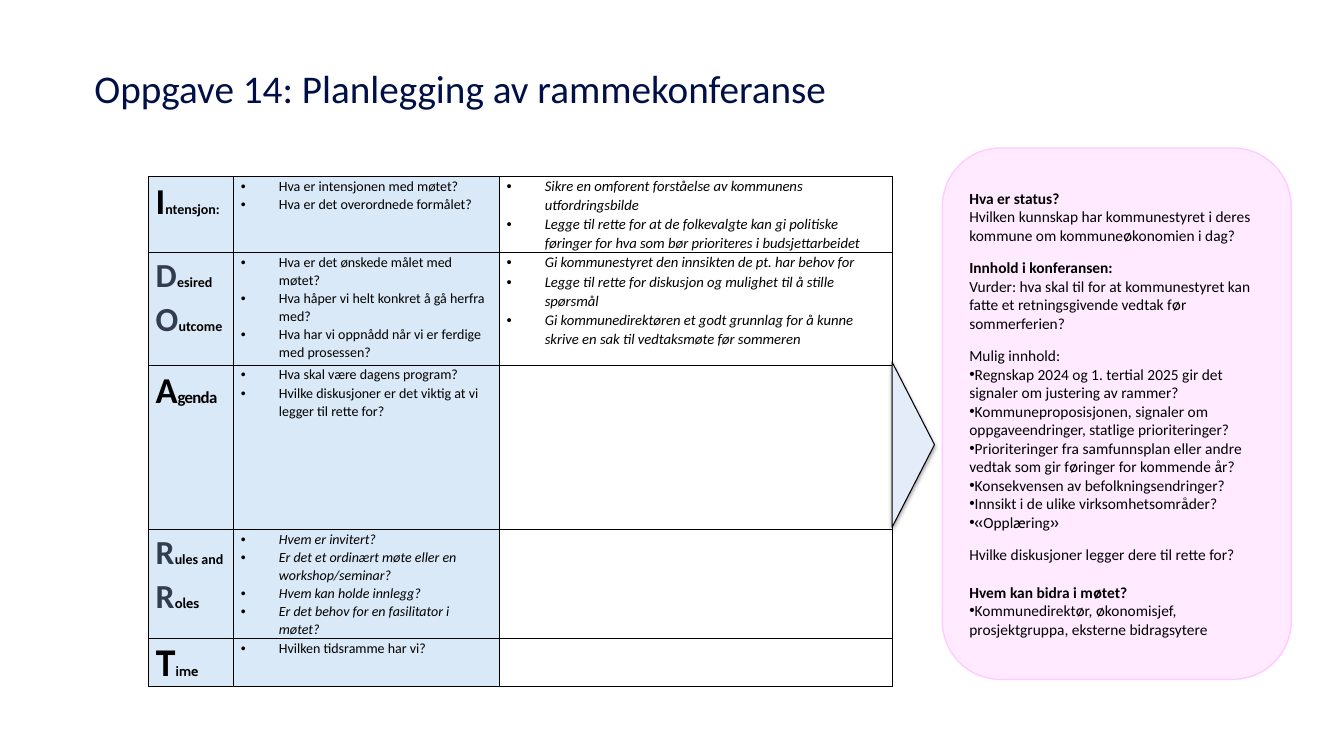
from itertools import groupby

from lxml import etree
from pptx import Presentation
from pptx.dml.color import RGBColor
from pptx.enum.shapes import MSO_SHAPE
from pptx.enum.text import MSO_ANCHOR, PP_ALIGN
from pptx.oxml.ns import qn
from pptx.util import Cm, Pt

ROUNDED = MSO_SHAPE.ROUNDED_RECTANGLE
TRIANGLE = MSO_SHAPE.ISOSCELES_TRIANGLE
TOP, MIDDLE = MSO_ANCHOR.TOP, MSO_ANCHOR.MIDDLE
LEFT = PP_ALIGN.LEFT

COLOURS = {
    "title": "001046",
    "text": "000000",
    "initial": "323E4F",
    "label": "DAE9F7",
    "arrow": "E3ECF8",
    "panel": "FFCCFF",
}
BODY_FONT, SECOND_FONT = "Calibri", "Cabin"

STRONG = (26, "text", -50, BODY_FONT)
STRONG_SECOND = (26, "text", -50, SECOND_FONT)
SOFT = (24, "initial", 20, BODY_FONT)
SMALL = (10, "text", 0, BODY_FONT)
SMALL_SECOND = (10, "text", 0, SECOND_FONT)
TIGHT = (12, "text", -50, BODY_FONT)

COLUMN_WIDTHS = (2.15, 6.7, 9.9)
PLAIN, ITALIC, ANSWER = (10, False), (10, True), (10.5, True)
ROWS = [
    (1.9, [("I", STRONG), ("ntensjon:", SMALL)], PLAIN,
     ["Hva er intensjonen med møtet?", "Hva er det overordnede formålet?"],
     ["Sikre en omforent forståelse av kommunens utfordringsbilde",
      "Legge til rette for at de folkevalgte kan gi politiske føringer for hva "
      "som bør prioriteres i budsjettarbeidet"]),
    (2.84, [("D", SOFT), ("esired ", SMALL), ("O", SOFT), ("utcome", SMALL)], PLAIN,
     ["Hva er det ønskede målet med møtet?",
      "Hva håper vi helt konkret å gå herfra med?",
      "Hva har vi oppnådd når vi er ferdige med prosessen?"],
     ["Gi kommunestyret den innsikten de pt. har behov for",
      "Legge til rette for diskusjon og mulighet til å stille spørsmål",
      "Gi kommunedirektøren et godt grunnlag for å kunne skrive en sak til "
      "vedtaksmøte før sommeren"]),
    (4.14, [("A", STRONG), ("genda", TIGHT)], PLAIN,
     ["Hva skal være dagens program?",
      "Hvilke diskusjoner er det viktig at vi legger til rette for?"], []),
    (2.27, [("R", SOFT), ("ules and ", SMALL), ("R", SOFT), ("oles", SMALL_SECOND)], ITALIC,
     ["Hvem er invitert?", "Er det et ordinært møte eller en workshop/seminar?",
      "Hvem kan holde innlegg?", "Er det behov for en fasilitator i møtet?"], []),
    (1.21, [("T", STRONG_SECOND), ("ime", SMALL_SECOND)], PLAIN,
     ["Hvilken tidsramme har vi?"], []),
]

HEADING, TEXT, BULLET = "heading", "text", "bullet"
PANEL = [
    (0, HEADING, "Hva er status?"),
    (0, TEXT, "Hvilken kunnskap har kommunestyret i deres kommune om kommuneøkonomien i dag?"),
    (10, HEADING, "Innhold i konferansen:"),
    (0, TEXT, "Vurder: hva skal til for at kommunestyret kan fatte et retningsgivende "
              "vedtak før sommerferien?"),
    (10, TEXT, "Mulig innhold:"),
    (0, BULLET, "Regnskap 2024 og 1. tertial 2025 gir det signaler om justering av rammer?"),
    (0, BULLET, "Kommuneproposisjonen, signaler om oppgaveendringer, statlige prioriteringer?"),
    (0, BULLET, "Prioriteringer fra samfunnsplan eller andre vedtak som gir føringer for "
                "kommende år?"),
    (0, BULLET, "Konsekvensen av befolkningsendringer?"),
    (0, BULLET, "Innsikt i de ulike virksomhetsområder?"),
    (0, BULLET, "«Opplæring»"),
    (10, TEXT, "Hvilke diskusjoner legger dere til rette for?"),
    (13.5, HEADING, "Hvem kan bidra i møtet?"),
    (0, BULLET, "Kommunedirektør, økonomisjef, prosjektgruppa, eksterne bidragsytere"),
]


def colour(name):
    return RGBColor.from_string(COLOURS[name])


def set_font(font, size, colour_name="text", name=BODY_FONT, bold=False, italic=False):
    font.size, font.name = Pt(size), name
    font.bold, font.italic = bold, italic
    font.color.rgb = colour(colour_name)


def add_bullet(paragraph, indent):
    properties = paragraph._p.get_or_add_pPr()
    properties.set("marL", str(indent))
    properties.set("indent", str(-indent))
    etree.SubElement(properties, qn("a:buFont"), typeface="Arial")
    etree.SubElement(properties, qn("a:buChar"), char="•")


def add_paragraph(frame, index):
    return frame.paragraphs[0] if index == 0 else frame.add_paragraph()


def add_title(slide, text):
    box = slide.shapes.add_textbox(Cm(2.13), Cm(1.5), Cm(19.6), Cm(2.24))
    frame = box.text_frame
    frame.word_wrap = False
    frame.vertical_anchor = TOP
    paragraph = frame.paragraphs[0]
    paragraph.text = text
    set_font(paragraph.font, 28, "title")


def style_cell(cell, filled):
    cell.margin_left = cell.margin_right = Cm(0.18)
    cell.margin_top = cell.margin_bottom = 0
    properties = cell._tc.get_or_add_tcPr()
    for side in ("lnL", "lnR", "lnT", "lnB"):
        border = etree.SubElement(properties, qn(f"a:{side}"), w=str(Pt(1)))
        fill = etree.SubElement(border, qn("a:solidFill"))
        etree.SubElement(fill, qn("a:srgbClr"), val=COLOURS["text"])
    if filled:
        cell.fill.solid()
        cell.fill.fore_color.rgb = colour("label")
    else:
        cell.fill.background()


def write_label(cell, parts):
    paragraph = cell.text_frame.paragraphs[0]
    paragraph.line_spacing = 1.07
    for text, (size, colour_name, spacing, name) in parts:
        run = paragraph.add_run()
        run.text = text
        set_font(run.font, size, colour_name, name, bold=True)
        run._r.get_or_add_rPr().set("spc", str(spacing))


def write_bullets(cell, lines, style):
    size, italic = style
    for index, line in enumerate(lines):
        paragraph = add_paragraph(cell.text_frame, index)
        paragraph.text = line
        paragraph.line_spacing = 1.07
        add_bullet(paragraph, Cm(0.96))
        set_font(paragraph.font, size, italic=italic)


def add_planning_table(slide):
    height = sum(row[0] for row in ROWS)
    table = slide.shapes.add_table(len(ROWS), len(COLUMN_WIDTHS), Cm(3.74), Cm(4.45),
                                   Cm(sum(COLUMN_WIDTHS)), Cm(height)).table
    table.first_row = table.horz_banding = False
    for column, width in zip(table.columns, COLUMN_WIDTHS):
        column.width = Cm(width)
    for row, (height, label, style, questions, answers) in zip(table.rows, ROWS):
        row.height = Cm(height)
        for index, cell in enumerate(row.cells):
            style_cell(cell, index < 2)
        write_label(row.cells[0], label)
        write_bullets(row.cells[1], questions, style)
        write_bullets(row.cells[2], answers, ANSWER)


def add_filled_shape(slide, kind, box, fill, line, line_width):
    shape = slide.shapes.add_shape(kind, *(Cm(length) for length in box))
    shape.shadow.inherit = False
    shape.fill.solid()
    shape.fill.fore_color.rgb = colour(fill)
    shape.line.color.rgb = colour(line)
    shape.line.width = Pt(line_width)
    return shape


def set_alpha(element, percent):
    etree.SubElement(element, qn("a:alpha"), val=str(percent * 1000))


def add_arrow(slide):
    arrow = add_filled_shape(slide, TRIANGLE, (20.93, 10.67, 4.17, 1.07), "arrow", "text", 0.75)
    arrow.rotation = 90
    effects = arrow._element.spPr.find(qn("a:effectLst"))
    shadow = etree.SubElement(effects, qn("a:outerShdw"), blurRad=str(Pt(3.1)),
                              dist=str(Pt(1.6)), dir="5400000", rotWithShape="0")
    set_alpha(etree.SubElement(shadow, qn("a:srgbClr"), val=COLOURS["text"]), 38)


def add_panel(slide):
    panel = add_filled_shape(slide, ROUNDED, (23.75, 3.73, 8.79, 13.39), "panel", "panel", 1)
    set_alpha(panel._element.spPr.find(qn("a:solidFill"))[0], 41)
    frame = panel.text_frame
    frame.word_wrap = True
    frame.vertical_anchor = MIDDLE
    for index, (gap, kind, text) in enumerate(PANEL):
        paragraph = add_paragraph(frame, index)
        paragraph.alignment = LEFT
        if gap:
            paragraph.space_before = Pt(gap)
        if kind == BULLET:
            add_bullet(paragraph, 0)
        set_font(paragraph.font, 11, bold=kind == HEADING)
        for plain, letters in groupby(text, str.isascii):
            run = paragraph.add_run()
            run.text = "".join(letters)
            if not plain:
                run.font.name = SECOND_FONT


def main():
    presentation = Presentation()
    presentation.slide_width, presentation.slide_height = Cm(33.87), Cm(19.05)
    slide = presentation.slides.add_slide(presentation.slide_layouts[6])
    add_planning_table(slide)
    add_arrow(slide)
    add_panel(slide)
    add_title(slide, "Oppgave 14: Planlegging av rammekonferanse")
    presentation.save("out.pptx")


if __name__ == "__main__":
    main()
